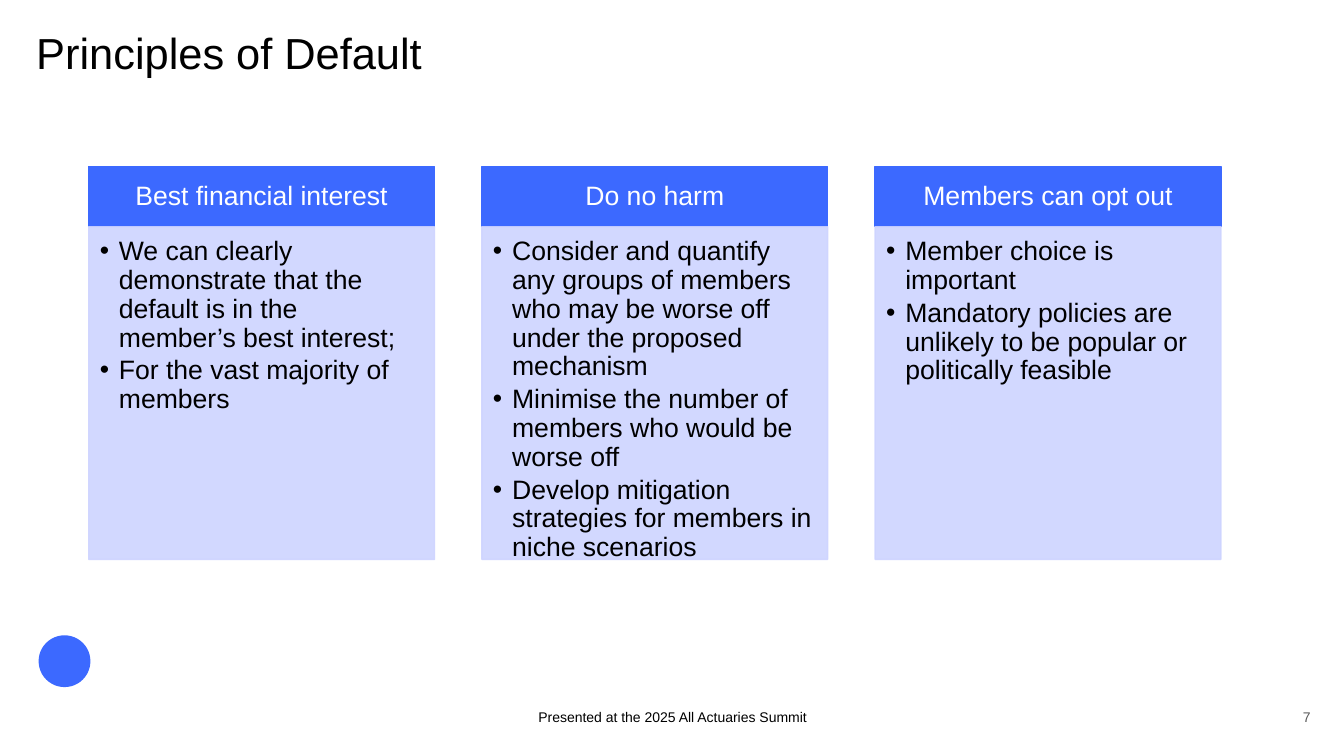
from pptx import Presentation
from pptx.dml.color import RGBColor
from pptx.enum.shapes import MSO_SHAPE
from pptx.enum.text import MSO_ANCHOR, PP_ALIGN
from pptx.oxml.ns import qn
from pptx.util import Pt
from lxml.etree import SubElement

PX = 9144  # 100 px to the inch
BLUE, LILAC, BLACK, WHITE, GREY = "3C69FF", "CED4FF", "000000", "FFFFFF", "5B5B5B"
PRINCIPLES = [
    ("Best financial interest", [
        "We can clearly demonstrate that the default is in the member’s best interest;",
        "For the vast majority of members"]),
    ("Do no harm", [
        "Consider and quantify any groups of members who may be worse off "
        "under the proposed mechanism",
        "Minimise the number of members who would be worse off",
        "Develop mitigation strategies for members in niche scenarios"]),
    ("Members can opt out", [
        "Member choice is important",
        "Mandatory policies are unlikely to be popular or politically feasible"]),
]


def px(*lengths):
    return [n * PX for n in lengths]


def rgb(color):
    return RGBColor.from_string(color)


def set_alpha(fill_parent, percent):
    clr = fill_parent.find(qn("a:solidFill")).find(qn("a:srgbClr"))
    SubElement(clr, qn("a:alpha")).set("val", str(percent * 1000))


def add_block(s, kind, box, color, alpha=100):
    sp = s.shapes.add_shape(kind, *px(*box))
    sp.shadow.inherit = False
    sp.fill.solid()
    sp.fill.fore_color.rgb = rgb(color)
    sp.line.color.rgb = rgb(color)
    sp.line.width = Pt(1)
    if alpha < 100:
        spPr = sp.fill._xPr
        set_alpha(spPr, alpha)
        set_alpha(spPr.find(qn("a:ln")), alpha)
    return sp


def add_bullet(p, indent):
    pPr = p._p.get_or_add_pPr()
    pPr.set("marL", str(indent * PX))
    pPr.set("indent", str(-indent * PX))
    SubElement(pPr, qn("a:buFont")).set("typeface", "Arial")
    SubElement(pPr, qn("a:buChar")).set("char", "•")


def write(sp, lines, size, color, align=PP_ALIGN.LEFT, anchor=MSO_ANCHOR.TOP,
          insets=(0, 0, 0, 0), spacing=None, after=None, bullet=0):
    tf = sp.text_frame
    tf.word_wrap = True
    tf.vertical_anchor = anchor
    tf.margin_left, tf.margin_top, tf.margin_right, tf.margin_bottom = px(*insets)
    for i, line in enumerate(lines):
        p = tf.add_paragraph() if i else tf.paragraphs[0]
        p.alignment = align
        p.line_spacing = spacing
        p.space_after = after
        if bullet:
            add_bullet(p, bullet)
        r = p.add_run()
        r.text = line
        r.font.name = "Arial"
        r.font.size = Pt(size)
        r.font.color.rgb = rgb(color)


def add_title(s, box, text):
    write(s.shapes.add_textbox(*px(*box)), [text], 31, BLACK, spacing=0.9)


def add_principle(s, box, heading, points):
    x, y, w, h = box
    head_h = 60
    head = add_block(s, MSO_SHAPE.RECTANGLE, (x, y, w, head_h), BLUE)
    write(head, [heading], 19, WHITE, PP_ALIGN.CENTER, MSO_ANCHOR.MIDDLE,
          insets=(15, 8, 15, 8), spacing=0.9)
    body = add_block(s, MSO_SHAPE.RECTANGLE, (x, y + head_h, w, h - head_h), LILAC, 90)
    write(body, points, 19, BLACK, insets=(11, 11, 15, 17), spacing=0.9,
          after=Pt(3), bullet=19)


def add_principles(s, box, gap):
    x, y, w, h = box
    n = len(PRINCIPLES)
    col_w = (w - gap * (n - 1)) // n
    for i, (heading, points) in enumerate(PRINCIPLES):
        add_principle(s, (x + i * (col_w + gap), y, col_w, h), heading, points)


def add_footer(s, box):
    x, y, w, h = box
    add_block(s, MSO_SHAPE.OVAL, (x, y, 50, 50), BLUE)
    text_y, text_h = y + h - 20, 20
    note = s.shapes.add_textbox(*px(442, text_y, 450, text_h))
    write(note, ["Presented at the 2025 All Actuaries Summit"], 10, BLACK,
          PP_ALIGN.CENTER, MSO_ANCHOR.BOTTOM)
    number = s.shapes.add_textbox(*px(x + w - 46, text_y, 46, text_h))
    write(number, ["7"], 10, GREY, PP_ALIGN.RIGHT, MSO_ANCHOR.BOTTOM)


def main():
    prs = Presentation()
    prs.slide_width, prs.slide_height = px(1333, 750)
    s = prs.slides.add_slide(prs.slide_layouts[6])
    add_title(s, (36, 32, 1176, 135), "Principles of Default")
    add_principles(s, (88, 165, 1124, 390), gap=47)
    add_footer(s, (39, 631, 1261, 89))
    prs.save("out.pptx")


if __name__ == "__main__":
    main()
